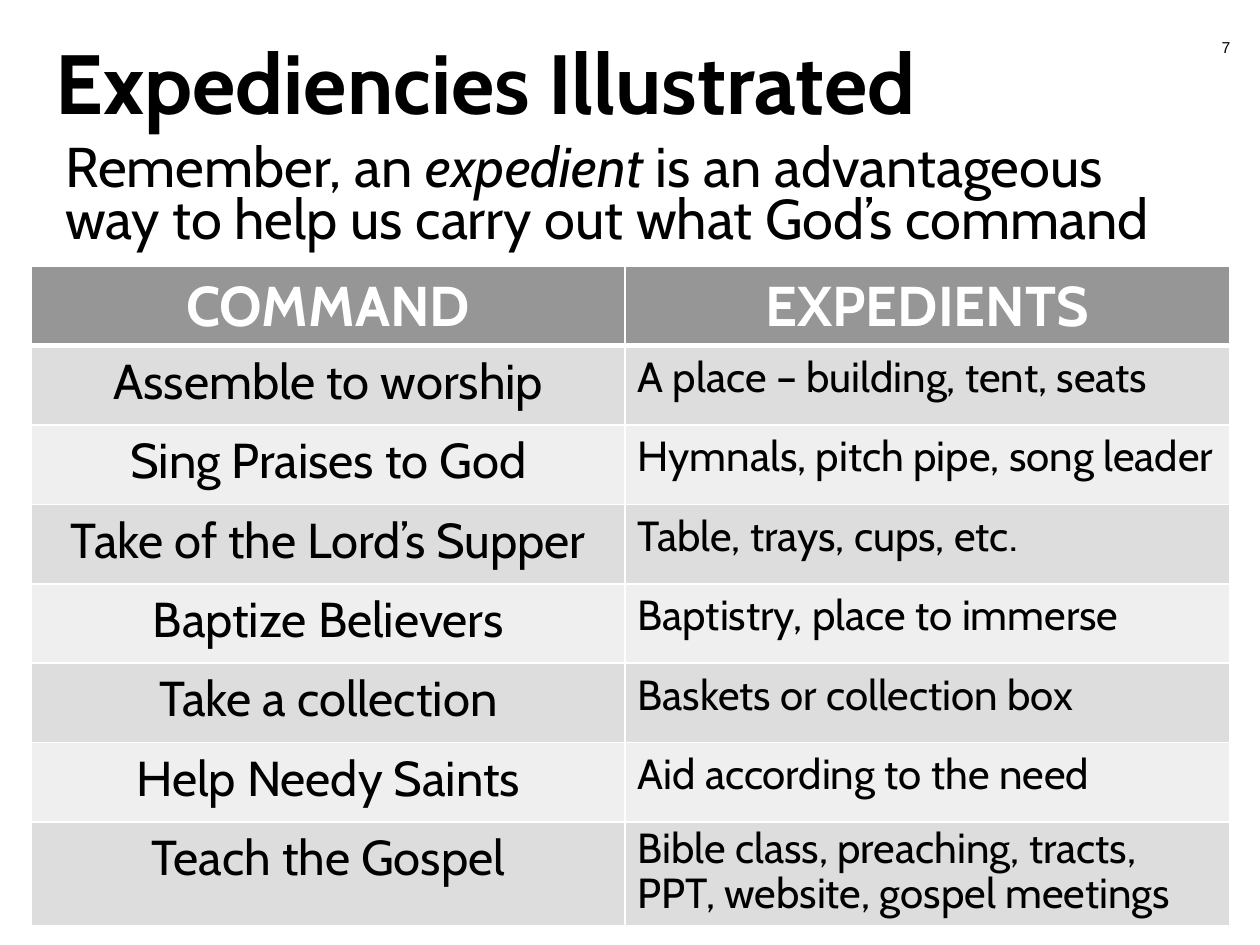
from pptx import Presentation
from pptx.dml.color import RGBColor as Rgb
from pptx.enum.text import MSO_ANCHOR as Anchor, MSO_AUTO_SIZE as Fit, PP_ALIGN as Align
from pptx.oxml import parse_xml
from pptx.oxml.ns import nsdecls
from pptx.util import Inches, Pt

INK = {"text": "000000", "head": "969696", "odd": "DDDDDD",
       "even": "EFEFEF", "white": "FFFFFF"}
FONT = "Cabin"
HEADS = ("COMMAND", "EXPEDIENTS")
ROWS = (
    ("Assemble to worship", "A place – building, tent, seats"),
    ("Sing Praises to God", "Hymnals, pitch pipe, song leader"),
    ("Take of the Lord’s Supper", "Table, trays, cups, etc."),
    ("Baptize Believers", "Baptistry, place to immerse"),
    ("Take a collection", "Baskets or collection box"),
    ("Help Needy Saints", "Aid according to the need"),
    ("Teach the Gospel",
     "Bible class, preaching, tracts, PPT, website, gospel meetings"),
)


def add_run(para, text, size, color="text", face=FONT, bold=False, italic=False):
    run = para.add_run()
    run.text = text
    font = run.font
    font.name, font.size = face, Pt(size)
    font.bold, font.italic = bold, italic
    font.color.rgb = Rgb.from_string(INK[color])


def add_title(slide, box):
    title = slide.shapes.title
    title.left, title.top, title.width, title.height = map(Inches, box)
    frame = title.text_frame
    frame.auto_size = Fit.NONE
    frame.vertical_anchor = Anchor.MIDDLE
    para = frame.paragraphs[0]
    para.alignment = Align.LEFT
    para.line_spacing = 0.9
    add_run(para, "Expediencies Illustrated", 48, bold=True)


def add_box(slide, box):
    frame = slide.shapes.add_textbox(*map(Inches, box)).text_frame
    frame.word_wrap = True
    return frame


def add_number(slide, box):
    frame = add_box(slide, box)
    frame.vertical_anchor = Anchor.MIDDLE
    para = frame.paragraphs[0]
    para.alignment = Align.CENTER
    add_run(para, "7", 9, face="Arial")


def add_intro(slide, box):
    frame = add_box(slide, box)
    frame.auto_size = Fit.SHAPE_TO_FIT_TEXT
    para = frame.paragraphs[0]
    para.line_spacing = Pt(30)
    add_run(para, "Remember, an ", 32)
    add_run(para, "expedient", 32, italic=True)
    add_run(para, " is an advantageous way to help us carry out what God’s command", 32)


def add_edges(cell, top, bottom):
    props = cell._tc.get_or_add_tcPr()
    for side, wide in (("L", 1), ("R", 1), ("T", top), ("B", bottom)):
        props.append(parse_xml(
            f'<a:ln{side} {nsdecls("a")} w="{Pt(wide)}"><a:solidFill>'
            f'<a:srgbClr val="{INK["white"]}"/></a:solidFill></a:ln{side}>'))


def add_grid(slide, box):
    count = len(ROWS) + 1
    table = slide.shapes.add_table(count, 2, *map(Inches, box)).table
    for col, wide in zip(table.columns, (4.71, 4.8)):
        col.width = Inches(wide)
    for r, texts in enumerate((HEADS, *ROWS)):
        head = r == 0
        fill = "head" if head else "odd" if r % 2 else "even"
        for c, text in enumerate(texts):
            cell = table.cell(r, c)
            add_edges(cell, 3 if r == 1 else 1, 3 if head else 1)
            cell.fill.solid()
            cell.fill.fore_color.rgb = Rgb.from_string(INK[fill])
            para = cell.text_frame.paragraphs[0]
            para.alignment = Align.CENTER if head or c == 0 else Align.LEFT
            if r == count - 1 and c == 1:
                para.line_spacing = Pt(26)
            size = 32 if head else (28, 24)[c]
            add_run(para, text, size, "white" if head else "text", bold=head)


def main():
    deck = Presentation()
    deck.slide_width, deck.slide_height = Inches(10), Inches(7.5)
    slide = deck.slides.add_slide(deck.slide_layouts[5])
    add_number(slide, (9.45, 0, 0.56, 0.75))
    add_title(slide, (0.34, 0.28, 7.98, 0.83))
    add_grid(slide, (0.25, 2.11, 9.51, 5.04))
    add_intro(slide, (0.42, 1.11, 9.16, 0.96))
    deck.save("out.pptx")


if __name__ == "__main__":
    main()
